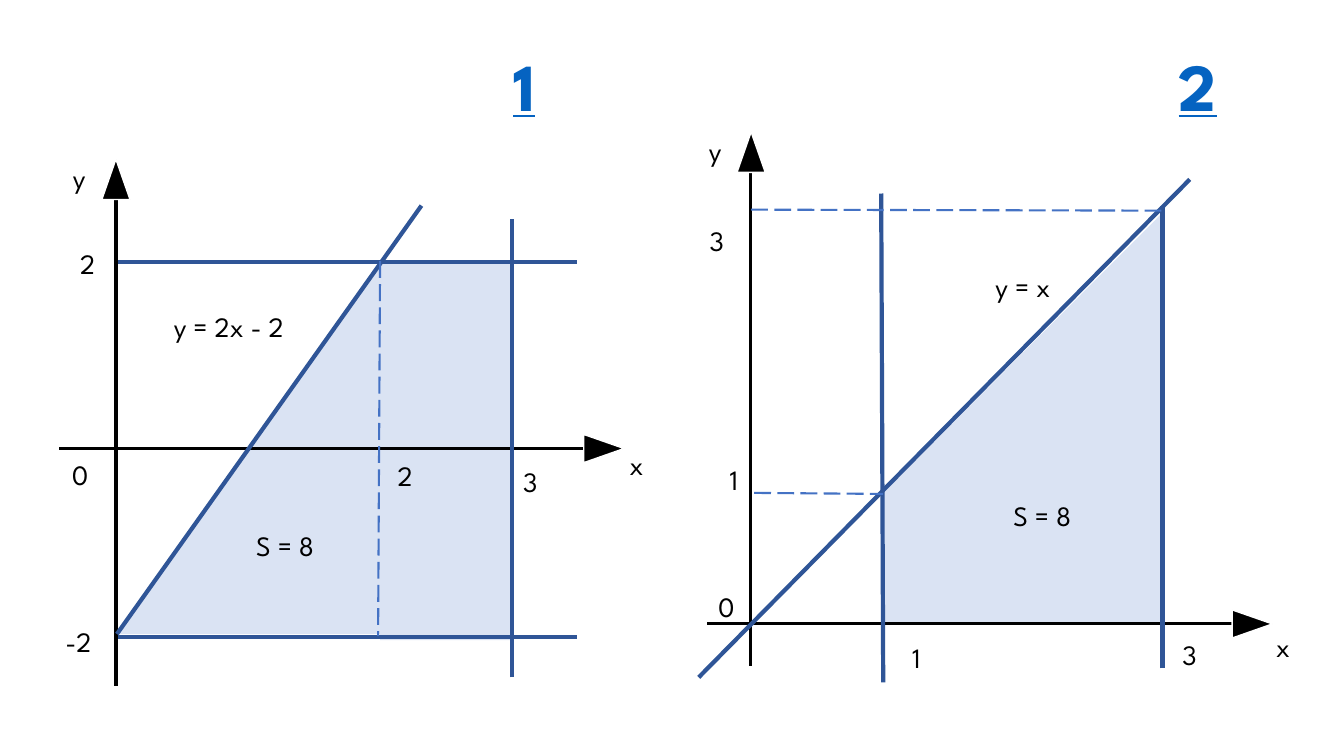
from dataclasses import dataclass

from lxml.etree import SubElement
from pptx import Presentation
from pptx.dml.color import RGBColor
from pptx.enum.dml import MSO_LINE
from pptx.enum.shapes import MSO_CONNECTOR, MSO_SHAPE
from pptx.enum.text import MSO_AUTO_SIZE, PP_ALIGN
from pptx.oxml.ns import qn
from pptx.slide import Slide
from pptx.util import Inches, Pt

FONT = "League Spartan"
BLACK, WHITE = "000000", "FFFFFF"
AREA_BLUE, GRAPH_BLUE, GUIDE_BLUE, LINK_BLUE = "DAE3F3", "2F5597", "4472C4", "0563C1"
ARROW_WIDTH, ARROW_HEIGHT = 0.28, 0.4


@dataclass(frozen=True)
class Area:
    left: float
    top: float
    width: float
    height: float
    apex: float | None = None  # None makes a rectangle
    rotation: float = 0


@dataclass(frozen=True)
class Segment:
    x1: float
    y1: float
    x2: float
    y2: float


@dataclass(frozen=True)
class Label:
    text: str
    left: float
    top: float
    width: float = 1.06
    height: float = 0.4


@dataclass(frozen=True)
class Graph:
    heading: Label
    areas: list[Area]
    axes: list[Segment]
    arrow_up: tuple[float, float]
    arrow_right: tuple[float, float]
    curves: list[Segment]
    guides: list[Segment]
    labels: list[Label]


GRAPHS = [
    Graph(
        heading=Label("1", 4.99, 0.39, 0.58, 0.91),
        areas=[Area(1.15, 2.57, 2.64, 3.72, apex=1), Area(3.77, 2.6, 1.32, 3.75)],
        axes=[Segment(1.15, 1.78, 1.15, 6.81), Segment(5.81, 4.45, 0.59, 4.45)],
        arrow_up=(1.01, 1.58),
        arrow_right=(5.85, 4.25),
        curves=[
            Segment(1.17, 2.6, 5.72, 2.6),
            Segment(1.17, 6.32, 5.72, 6.32),
            Segment(5.08, 6.72, 5.08, 2.17),
            Segment(1.16, 6.29, 4.18, 2.04),
        ],
        guides=[Segment(3.77, 2.59, 3.75, 6.31)],
        labels=[
            Label("x", 5.76, 4.37, 1.11, 0.44),
            Label("y", 0.29, 1.52, 0.99),
            Label("0", 0.42, 4.47, 0.75),
            Label("2", 0.34, 2.37),
            Label("-2", 0.25, 6.12),
            Label("3", 4.73, 4.54),
            Label("2", 3.49, 4.48),
            Label("y = 2x - 2", 1.41, 3, 1.72, 0.43),
            Label("S = 8", 2.3, 5.17, height=0.44),
        ],
    ),
    Graph(
        heading=Label("2", 11.59, 0.39, 0.58, 0.91),
        areas=[
            Area(8.77, 2.1, 2.78, 2.77, apex=0, rotation=270),
            Area(8.76, 4.87, 2.75, 1.32),
        ],
        axes=[Segment(7.44, 1.66, 7.44, 6.61), Segment(12.23, 6.19, 7.01, 6.19)],
        arrow_up=(7.31, 1.31),
        arrow_right=(12.28, 5.99),
        curves=[
            Segment(11.53, 6.63, 11.53, 2.04),
            Segment(6.93, 6.72, 11.8, 1.78),
            Segment(8.76, 6.77, 8.74, 1.92),
        ],
        guides=[Segment(7.45, 2.08, 11.54, 2.09), Segment(7.48, 4.89, 8.76, 4.9)],
        labels=[
            Label("x", 12.17, 6.17, 1.11, 0.44),
            Label("y", 6.6, 1.25, 0.99),
            Label("0", 6.83, 5.78, 0.75),
            Label("3", 11.27, 6.25),
            Label("1", 8.56, 6.28),
            Label("3", 6.58, 2.14),
            Label("1", 6.75, 4.52),
            Label("y = x", 9.38, 2.6, 1.53, 0.44),
            Label("S = 8", 9.81, 4.87, height=0.44),
        ],
    ),
]


def rgb(hex_code: str) -> RGBColor:
    return RGBColor.from_string(hex_code)


def draw_area(slide: Slide, area: Area, fill: str = AREA_BLUE, outline: str | None = None) -> None:
    preset = MSO_SHAPE.RECTANGLE if area.apex is None else MSO_SHAPE.ISOSCELES_TRIANGLE
    shape = slide.shapes.add_shape(
        preset, Inches(area.left), Inches(area.top), Inches(area.width), Inches(area.height)
    )
    if area.apex is not None:
        shape.adjustments[0] = area.apex
    shape.rotation = area.rotation
    shape.shadow.inherit = False
    shape.fill.solid()
    shape.fill.fore_color.rgb = rgb(fill)
    if outline is None:
        shape.line.fill.background()
    else:
        shape.line.color.rgb = rgb(outline)
        shape.line.width = Pt(1)


def draw_arrowhead(slide: Slide, corner: tuple[float, float], rotation: float) -> None:
    left, top = corner
    head = Area(left, top, ARROW_WIDTH, ARROW_HEIGHT, apex=0.5, rotation=rotation)
    draw_area(slide, head, BLACK, WHITE)


def draw_segment(
    slide: Slide, segment: Segment, color: str, weight: float, dash: MSO_LINE | None = None
) -> None:
    connector = slide.shapes.add_connector(
        MSO_CONNECTOR.STRAIGHT,
        Inches(segment.x1), Inches(segment.y1), Inches(segment.x2), Inches(segment.y2),
    )
    connector.line.color.rgb = rgb(color)
    connector.line.width = Pt(weight)
    if dash is not None:
        connector.line.dash_style = dash
    SubElement(connector._element.spPr, qn("a:effectLst"))


def draw_label(slide: Slide, label: Label, heading: bool = False) -> None:
    box = slide.shapes.add_textbox(
        Inches(label.left), Inches(label.top), Inches(label.width), Inches(label.height)
    )
    frame = box.text_frame
    frame.word_wrap = True
    frame.auto_size = MSO_AUTO_SIZE.SHAPE_TO_FIT_TEXT
    paragraph = frame.paragraphs[0]
    run = paragraph.add_run()
    run.text = label.text
    run.font.name = FONT
    run.font.size = Pt(48 if heading else 20)
    run.font.color.rgb = rgb(LINK_BLUE if heading else BLACK)
    if heading:
        run.font.bold = True
        run.font.underline = True
    else:
        paragraph.alignment = PP_ALIGN.CENTER
        paragraph.line_spacing = 1.07
        paragraph.space_after = Pt(8)


def draw_graph(slide: Slide, graph: Graph) -> None:
    for area in graph.areas:
        draw_area(slide, area)
    for axis in graph.axes:
        draw_segment(slide, axis, BLACK, 2.25)
    draw_arrowhead(slide, graph.arrow_up, 0)
    draw_arrowhead(slide, graph.arrow_right, 90)
    for curve in graph.curves:
        draw_segment(slide, curve, GRAPH_BLUE, 3)
    for guide in graph.guides:
        draw_segment(slide, guide, GUIDE_BLUE, 1.5, MSO_LINE.LONG_DASH)
    draw_label(slide, graph.heading, heading=True)
    for label in graph.labels:
        draw_label(slide, label)


def main() -> None:
    deck = Presentation()
    deck.slide_width, deck.slide_height = Inches(13.33), Inches(7.5)
    slide = deck.slides.add_slide(deck.slide_layouts[6])
    for graph in GRAPHS:
        draw_graph(slide, graph)
    deck.save("out.pptx")


if __name__ == "__main__":
    main()
